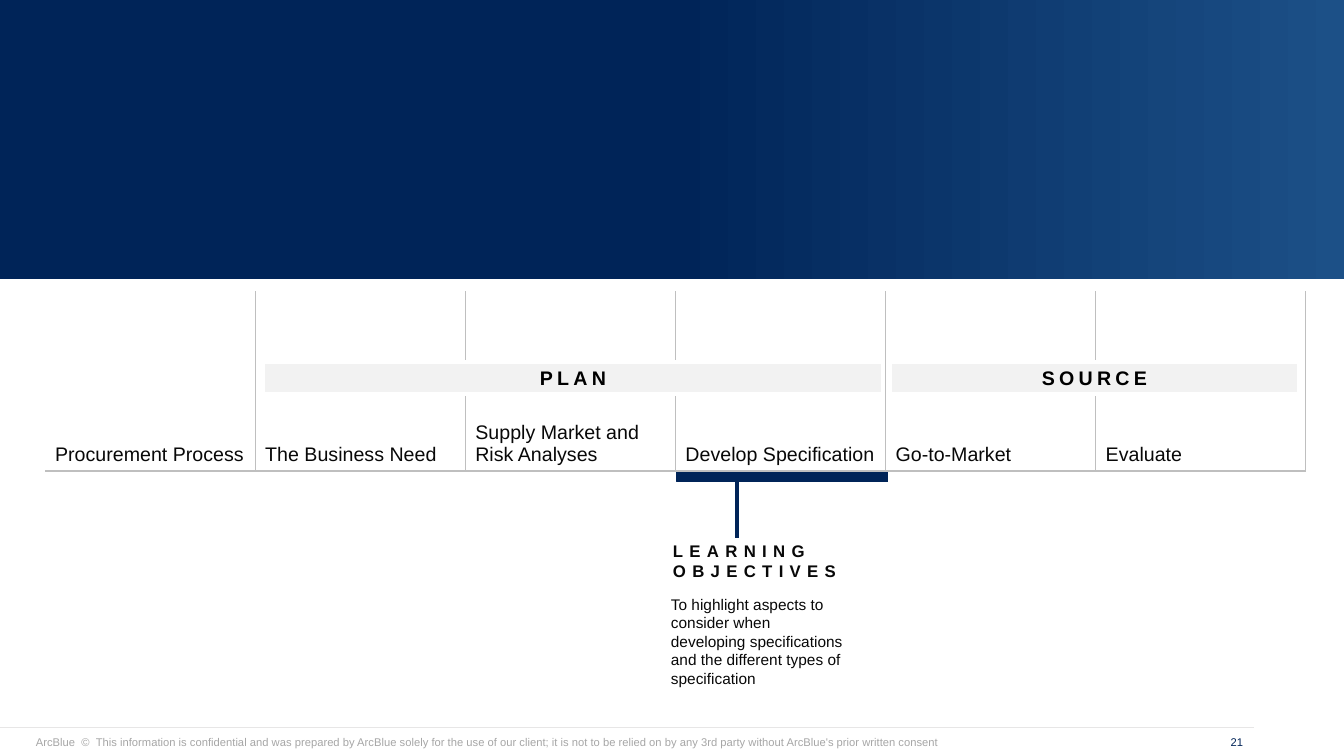
"""Build the procurement process slide with its learning objectives."""
from copy import deepcopy
from lxml import etree
from pptx import Presentation, util as u
from pptx.dml.color import RGBColor
from pptx.enum import shapes, text
from pptx.oxml import ns

PX = 914400 / 100.8
NAVY, INK, GREY = "002458", "080808", "BFBFBF"
LEFT, MID, RIGHT = text.PP_ALIGN.LEFT, text.PP_ALIGN.CENTER, text.PP_ALIGN.RIGHT


def px(*nums):
    return [u.Emu(round(n * PX)) for n in nums]


def write(frame, words, size, hue, bold=False, gap=0, align=LEFT):
    frame.word_wrap = True
    par = frame.paragraphs[0]
    par.text = words
    par.alignment = align
    font = par.font
    font.name, font.size, font.bold = "Arial", u.Pt(size), bold
    font.color.rgb = RGBColor.from_string(hue)
    if gap:
        par._p.xpath(".//a:defRPr")[0].set("spc", str(gap))


deck = Presentation()
deck.slide_width, deck.slide_height = px(1344, 756)
slide = deck.slides.add_slide(deck.slide_layouts[6])
tree = slide.shapes

band = tree.add_shape(shapes.MSO_SHAPE.RECTANGLE, *px(0, 0, 1344, 279))
band.shadow.inherit = False
band.line.fill.background()
band.fill.gradient()
band.fill.gradient_angle = 0
for stop, spot, hue in zip(band.fill.gradient_stops, (0.5, 1), (NAVY, "1C5087")):
    stop.position = spot
    stop.color.rgb = RGBColor.from_string(hue)
first = band._element.xpath(".//a:gs")[0]
start = deepcopy(first)
start.set("pos", "0")
first.addprevious(start)

for ends, hue, width in [
    ((0, 728, 1254, 728), "E7E6E6", 0.75),
    ((737, 479, 737, 538), NAVY, 2.25),
]:
    line = tree.add_connector(shapes.MSO_CONNECTOR.STRAIGHT, *px(*ends))
    line.line.color.rgb = RGBColor.from_string(hue)
    line.line.width = u.Pt(width)
    etree.SubElement(line._element.spPr, ns.qn("a:effectLst"))

for place, words, size, hue, bold, gap, align in [
    ((26, 730, 944, 24), "ArcBlue  ©  This information is confidential and was prepared by ArcBlue "
     "solely for the use of our client; it is not to be relied on by any 3rd party without "
     "ArcBlue's prior written consent", 8, "A6A6A6", False, 0, LEFT),
    ((1202, 730, 51, 24), "21", 8, NAVY, False, 0, RIGHT),
    ((671, 538, 181, 46), "LEARNING OBJECTIVES", 12, INK, True, 450, LEFT),
    ((661, 590, 193, 104), "To highlight aspects to consider when developing specifications "
     "and the different types of specification", 11, INK, False, 0, LEFT),
]:
    frame = tree.add_textbox(*px(*place)).text_frame
    write(frame, words, size, hue, bold, gap, align)
    if bold:
        frame.margin_left, frame.margin_top, frame.margin_bottom = px(2, 3, 3)

mark = tree.add_shape(shapes.MSO_SHAPE.RECTANGLE, *px(677, 471, 211, 11))
mark.shadow.inherit = False
mark.fill.solid()
mark.fill.fore_color.rgb = mark.line.color.rgb = RGBColor.from_string(NAVY)
mark.line.width = u.Pt(0.75)

steps = ["Procurement Process", "The Business Need", "Supply Market and Risk Analyses",
         "Develop Specification", "Go-to-Market", "Evaluate"]
table = tree.add_table(1, len(steps), *px(45, 291, 1261, 180)).table
table.first_row = table.horz_banding = False
for col, step in enumerate(steps):
    cell = table.cell(0, col)
    cell.fill.background()
    cell.vertical_anchor = text.MSO_ANCHOR.BOTTOM
    write(cell.text_frame, step, 14, INK)
    for spot, side in enumerate(("lnL", "lnR", "lnT", "lnB")):
        edge = etree.Element(ns.qn("a:" + side), w="12700")
        if side == "lnT" or (side == "lnL" and col == 0):
            etree.SubElement(edge, ns.qn("a:noFill"))
        else:
            fill = etree.SubElement(edge, ns.qn("a:solidFill"))
            etree.SubElement(fill, ns.qn("a:srgbClr"), val=GREY)
        cell._tc.tcPr.insert(spot, edge)

for left, width, phase in [(263, 620, "PLAN"), (890, 409, "SOURCE")]:
    bar = tree.add_shape(shapes.MSO_SHAPE.RECTANGLE, *px(left, 362, width, 32))
    bar.shadow.inherit = False
    bar.fill.solid()
    bar.fill.fore_color.rgb = RGBColor.from_string("F2F2F2")
    bar.line.color.rgb = RGBColor.from_string("FFFFFF")
    bar.line.width = u.Pt(3)
    frame = bar.text_frame
    frame.margin_left, frame.margin_top, frame.margin_right, frame.margin_bottom = px(4, 4, 4, 4)
    write(frame, phase, 14, "000000", True, 300, MID)

deck.save("out.pptx")
